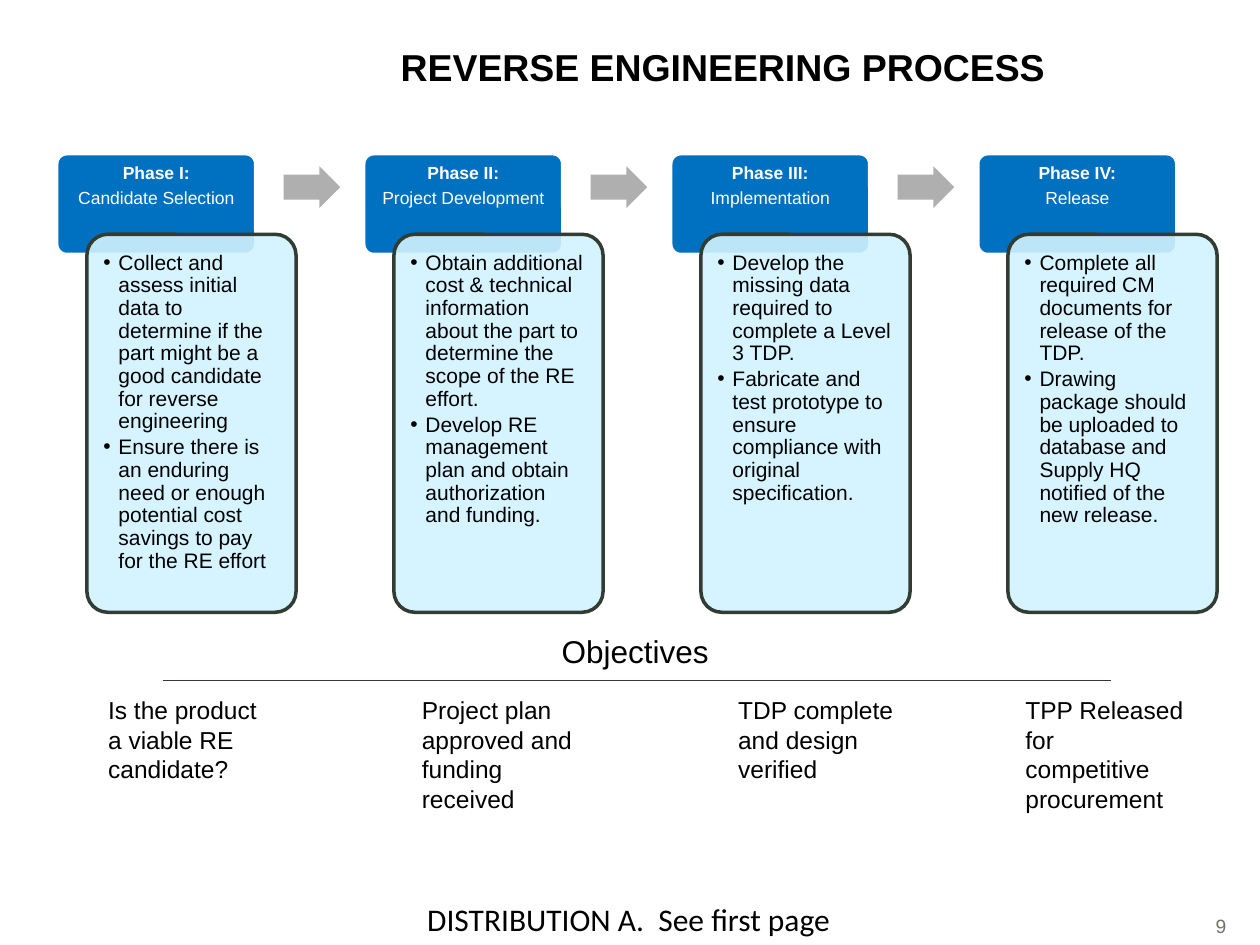
import pptx
import pptx.util
import pptx.dml.color
import pptx.enum.shapes
import pptx.enum.text
import pptx.oxml
import pptx.oxml.ns
from lxml import etree

Inches = pptx.util.Inches
Pt = pptx.util.Pt
RGBColor = pptx.dml.color.RGBColor
MSO_SHAPE = pptx.enum.shapes.MSO_SHAPE
MSO_ANCHOR = pptx.enum.text.MSO_ANCHOR
PP_ALIGN = pptx.enum.text.PP_ALIGN
qn = pptx.oxml.ns.qn

BLACK = RGBColor(0x00, 0x00, 0x00)
WHITE = RGBColor(0xFF, 0xFF, 0xFF)
PHASE_BLUE = RGBColor(0x00, 0x70, 0xC0)
CARD_BLUE = RGBColor(0xD1, 0xF3, 0xFF)
CARD_EDGE = RGBColor(0x33, 0x3C, 0x33)
ARROW_GRAY = RGBColor(0xAE, 0xAF, 0xAE)
RULE_GREEN = RGBColor(0x32, 0x3B, 0x32)
NUMBER_GRAY = RGBColor(0x71, 0x73, 0x65)

COMPARISON_LAYOUT = 4
FIRST_LEFT = 0.45
PHASE_PITCH = (7.76 - FIRST_LEFT) / 3

PHASES = [
    ("Phase I:", "Candidate Selection", [
        "Collect and assess initial data to determine if the part might be a "
        "good candidate for reverse engineering",
        "Ensure there is an enduring need or enough potential cost savings to "
        "pay for the RE effort"]),
    ("Phase II:", "Project Development", [
        "Obtain additional cost & technical information about the part to "
        "determine the scope of the RE effort.",
        "Develop RE management plan and obtain authorization and funding."]),
    ("Phase III:", "Implementation", [
        "Develop the missing data required to complete a Level 3 TDP.",
        "Fabricate and test prototype to ensure compliance with original "
        "specification."]),
    ("Phase IV:", "Release", [
        "Complete all required CM documents for release of the TDP.",
        "Drawing package should be uploaded to database and Supply HQ "
        "notified of the new release."]),
]

# Left edge, width and wording of each objective
OBJECTIVES = [
    (0.76, 1.46, "Is the product a viable RE candidate?"),
    (3.25, 1.53, "Project plan approved and funding received"),
    (5.76, 1.46, "TDP complete and design verified"),
    (8.04, 1.46, "TPP Released for competitive procurement"),
]


def place(shape, left, top, width, height):
    shape.left, shape.top = Inches(left), Inches(top)
    shape.width, shape.height = Inches(width), Inches(height)


def set_insets(frame, left, top, right, bottom):
    frame.margin_left, frame.margin_top = Inches(left), Inches(top)
    frame.margin_right, frame.margin_bottom = Inches(right), Inches(bottom)


def format_runs(paragraph, size, color, bold=False, font="Arial"):
    for run in paragraph.runs:
        run.font.name = font
        run.font.size = Pt(size)
        run.font.bold = bold
        run.font.color.rgb = color


def add_bullet(paragraph, indent):
    properties = paragraph._p.get_or_add_pPr()
    properties.set("marL", str(Inches(indent)))
    properties.set("indent", str(-Inches(indent)))
    etree.SubElement(properties, qn("a:buFont")).set("typeface", "Arial")
    etree.SubElement(properties, qn("a:buChar")).set("char", "•")


def add_label(slide, box, text, size, color=BLACK, font="Arial",
              align=PP_ALIGN.LEFT, anchor=MSO_ANCHOR.TOP, wrap=True):
    label = slide.shapes.add_textbox(*map(Inches, box))
    frame = label.text_frame
    frame.text = text
    frame.word_wrap = wrap
    frame.vertical_anchor = anchor
    frame.paragraphs[0].alignment = align
    format_runs(frame.paragraphs[0], size, color, font=font)


def add_block(slide, preset, box, fill, adjustments, edge=None):
    block = slide.shapes.add_shape(preset, *map(Inches, box))
    block.shadow.inherit = False
    for index, value in enumerate(adjustments):
        block.adjustments[index] = value
    block.fill.solid()
    block.fill.fore_color.rgb = fill
    if edge is None:
        block.line.fill.background()
    else:
        block.line.color.rgb = edge
        block.line.width = Pt(2)
    return block


def add_phase_header(slide, left, number, name):
    header = add_block(slide, MSO_SHAPE.ROUNDED_RECTANGLE,
                       (left, 1.22, 1.58, 0.8), PHASE_BLUE, [0.1], WHITE)
    frame = header.text_frame
    frame.text = f"{number}\n{name}"
    frame.word_wrap = True
    frame.vertical_anchor = MSO_ANCHOR.TOP
    set_insets(frame, 0.06, 0.06, 0.06, 0.04)
    for paragraph, bold in zip(frame.paragraphs, (True, False)):
        paragraph.alignment = PP_ALIGN.CENTER
        paragraph.line_spacing = 0.9
        paragraph.space_after = Pt(3.5)
        format_runs(paragraph, 10, WHITE, bold)


def add_card(slide, left):
    """Add the translucent panel that lies behind a phase's steps."""
    card = add_block(slide, MSO_SHAPE.ROUNDED_RECTANGLE,
                     (left, 1.86, 1.66, 3), CARD_BLUE, [0.1], CARD_EDGE)
    color = card._element.spPr.find(qn("a:solidFill"))[0]
    etree.SubElement(color, qn("a:alpha")).set("val", "90000")


def fill_steps(slide, body, left, steps):
    """Write the steps in a body placeholder and bring it in front of its card."""
    slide.shapes._spTree.append(body._element)
    place(body, left, 1.91, 1.57, 2.91)
    frame = body.text_frame
    frame.text = "\n".join(steps)
    frame.word_wrap = True
    frame.auto_size = pptx.enum.text.MSO_AUTO_SIZE.NONE
    frame.vertical_anchor = MSO_ANCHOR.TOP
    set_insets(frame, 0.09, 0.09, 0.09, 0.09)
    for paragraph in frame.paragraphs:
        add_bullet(paragraph, 0.12)
        paragraph.line_spacing = 0.9
        paragraph.space_before = Pt(0)
        paragraph.space_after = Pt(1.8)
        format_runs(paragraph, 12, BLACK)


def fill_title(title, text):
    place(title, 3.08, 0.3, 6.09, 0.88)
    frame = title.text_frame
    frame.text = text
    frame.auto_size = pptx.enum.text.MSO_AUTO_SIZE.NONE
    frame.vertical_anchor = MSO_ANCHOR.TOP
    frame.paragraphs[0].alignment = PP_ALIGN.LEFT
    format_runs(frame.paragraphs[0], 21.4, BLACK, bold=True)


def add_rule(slide, left, right, top):
    rule = slide.shapes.add_connector(
        pptx.enum.shapes.MSO_CONNECTOR.STRAIGHT,
        Inches(left), Inches(top), Inches(right), Inches(top))
    rule.line.color.rgb = RULE_GREEN
    rule.line.width = Pt(0.75)
    etree.SubElement(rule._element.spPr, qn("a:effectLst"))


def main():
    deck = pptx.Presentation()
    deck.slide_width, deck.slide_height = Inches(10), Inches(7.5)
    slide = deck.slides.add_slide(deck.slide_layouts[COMPARISON_LAYOUT])
    title, *bodies = slide.placeholders

    fill_title(title, "REVERSE ENGINEERING PROCESS")
    for index, (number, name, steps) in enumerate(PHASES):
        left = FIRST_LEFT + index * PHASE_PITCH
        add_phase_header(slide, left, number, name)
        add_card(slide, left + 0.24)
        fill_steps(slide, bodies[index], left + 0.28, steps)
        if index < len(PHASES) - 1:
            add_block(slide, MSO_SHAPE.RIGHT_ARROW,
                      (left + 1.8, 1.32, 0.45, 0.33), ARROW_GRAY, [0.6, 0.5])

    add_label(slide, (4.36, 4.97, 1.38, 0.4), "Objectives", 18, wrap=False)
    add_rule(slide, 1.29, 8.82, 5.4)
    for left, width, objective in OBJECTIVES:
        add_label(slide, (left, 5.47, width, 0.81), objective, 14)

    add_label(slide, (0.69, 6.98, 8.6, 0.51), "DISTRIBUTION A.  See first page",
              18, font="Calibri", align=PP_ALIGN.CENTER, anchor=MSO_ANCHOR.BOTTOM)
    add_label(slide, (9.55, 7.21, 0.46, 0.29), "9", 11, NUMBER_GRAY)
    deck.save("out.pptx")


if __name__ == "__main__":
    main()
